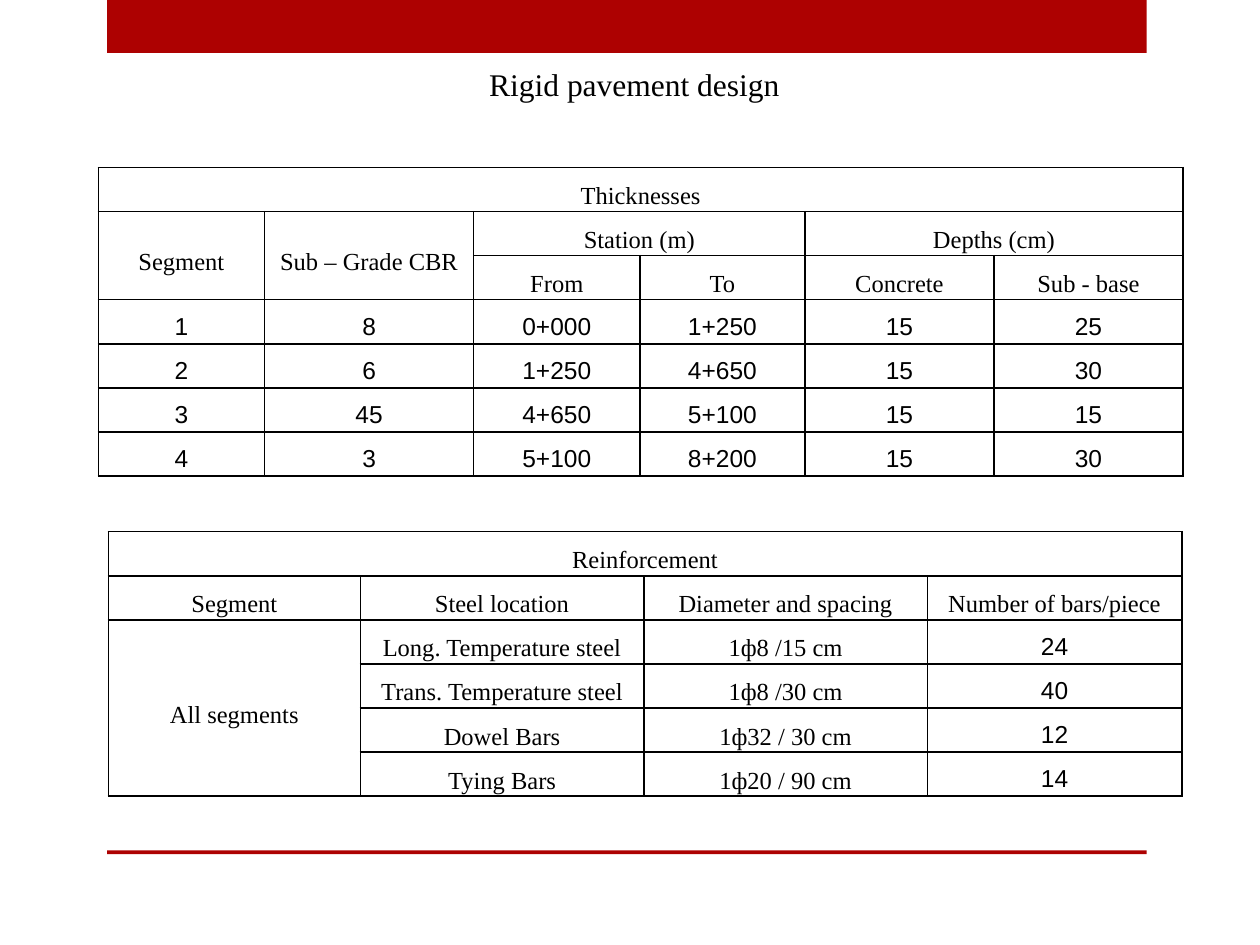
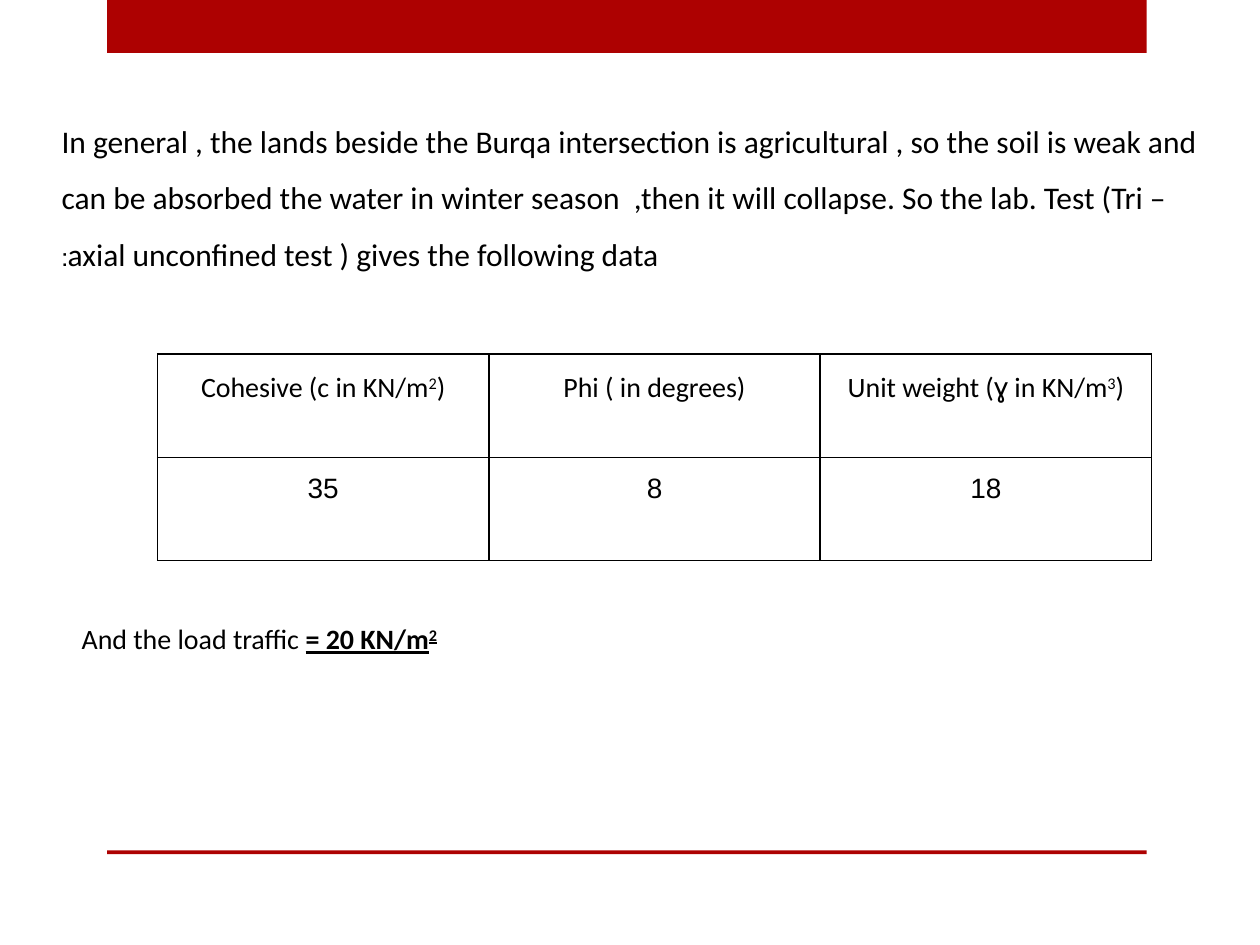
from dataclasses import dataclass

from lxml import etree
from pptx import Presentation
from pptx.dml.color import RGBColor
from pptx.enum import shapes, text
from pptx.oxml.ns import qn
from pptx.util import Inches, Pt


@dataclass(frozen=True)
class Theme:
    red: RGBColor = RGBColor(0xAD, 0x01, 0x01)
    ink: RGBColor = RGBColor(0, 0, 0)
    serif: str = "Times New Roman"
    sans: str = "Calibri"
    figures: str = "Arial"
    title: int = 18
    body: int = 16
    small: int = 14
    line_spacing: float = 1.5


THEME = Theme()


@dataclass(frozen=True)
class Part:
    """A stretch of text that differs from the rest of its paragraph."""
    text: str
    font: str | None = None
    size: int | None = None
    strong: bool = False
    raised: bool = False


THICKNESSES = [
    ["Thicknesses", None, None, None, None, None],
    ["Segment", "Sub – Grade CBR", "Station (m)", None, "Depths (cm)", None],
    [None, None, "From", "To", "Concrete", "Sub - base"],
    ["1", "8", "0+000", "1+250", "15", "25"],
    ["2", "6", "1+250", "4+650", "15", "30"],
    ["3", "45", "4+650", "5+100", "15", "15"],
    ["4", "3", "5+100", "8+200", "15", "30"],
]
THICKNESS_SPANS = [(0, 0, 0, 5), (1, 0, 2, 0), (1, 1, 2, 1), (1, 2, 1, 3), (1, 4, 1, 5)]

REINFORCEMENT = [
    ["Reinforcement", None, None, None],
    ["Segment", "Steel location", "Diameter and spacing", "Number of bars/piece"],
    ["All segments", "Long. Temperature steel", "1ф8 /15 cm", "24"],
    [None, "Trans. Temperature steel", "1ф8 /30 cm", "40"],
    [None, "Dowel Bars", "1ф32 / 30 cm", "12"],
    [None, "Tying Bars", "1ф20 / 90 cm", "14"],
]
REINFORCEMENT_SPANS = [(0, 0, 0, 3), (2, 0, 5, 0)]

SOIL_TEST = [
    [
        [Part("Cohesive (c in KN/m"), Part("2", raised=True), Part(")")],
        "Phi ( in degrees)",
        [Part("Unit weight ("), Part("ɣ", font=THEME.figures), Part(" in KN/m"),
         Part("3", raised=True), Part(")")],
    ],
    ["35", "8", "18"],
]

SOIL_NOTE = [
    Part("In general , the lands beside the Burqa intersection is agricultural , "
         "so the soil is weak and can be absorbed the water in winter season  ,then it "
         "will collapse. So the lab. Test (Tri – axial unconfined test ) gives the "
         "following data"),
    Part(":", size=THEME.small),
]
TRAFFIC_LOAD = [
    Part("And the load traffic "),
    Part("= 20 KN/m", strong=True),
    Part("2", strong=True, raised=True),
]


def write(paragraph, content, font, size, alignment):
    """Fill a paragraph from a string or a list of parts."""
    paragraph.alignment = alignment
    paragraph.font.name = font
    paragraph.font.size = Pt(size)
    paragraph.font.color.rgb = THEME.ink
    for part in [Part(content)] if isinstance(content, str) else content:
        run = paragraph.add_run()
        run.text = part.text
        if part.font:
            run.font.name = part.font
        if part.size:
            run.font.size = Pt(part.size)
        if part.strong:
            run.font.bold = run.font.underline = True
        if part.raised:
            run._r.get_or_add_rPr().set("baseline", "30000")


def add_band(slide, top, height):
    band = slide.shapes.add_shape(shapes.MSO_SHAPE.RECTANGLE, Inches(0.85), Inches(top),
                                  Inches(8.25), Inches(height))
    band.shadow.inherit = False
    band.fill.solid()
    band.fill.fore_color.rgb = THEME.red
    band.line.fill.background()


def add_banded_slide(presentation):
    slide = presentation.slides.add_slide(presentation.slide_layouts[6])
    add_band(slide, 0, 0.42)
    add_band(slide, 6.75, 0.03)
    return slide


def add_text(slide, place, content, font, size,
             alignment=text.PP_ALIGN.LEFT, anchor=text.MSO_ANCHOR.TOP):
    box = slide.shapes.add_textbox(*map(Inches, place))
    frame = box.text_frame
    frame.word_wrap = True
    frame.vertical_anchor = anchor
    write(frame.paragraphs[0], content, font, size, alignment)
    return frame.paragraphs[0]


def outline(cell):
    """Draw thin lines on all four sides of a cell."""
    properties = cell._tc.get_or_add_tcPr()
    for side in ("a:lnL", "a:lnR", "a:lnT", "a:lnB"):
        line = etree.SubElement(properties, qn(side), w=str(Pt(1)))
        fill = etree.SubElement(line, qn("a:solidFill"))
        etree.SubElement(fill, qn("a:srgbClr"), val=str(THEME.ink))


def is_figure(content):
    return isinstance(content, str) and set(content) <= set("0123456789+")


def add_grid(slide, left, top, widths, row_height, rows, font, size,
             spans=(), anchor=text.MSO_ANCHOR.MIDDLE, before=0, after=0):
    """Add an outlined table; spans give first row, first column, last row, last column."""
    frame = slide.shapes.add_table(len(rows), len(widths), Inches(left), Inches(top),
                                   Inches(sum(widths)), Inches(row_height * len(rows)))
    table = frame.table
    table.first_row = table.horz_banding = False
    for column, width in zip(table.columns, widths):
        column.width = Inches(width)
    for row_index, row in enumerate(rows):
        for column_index, content in enumerate(row):
            cell = table.cell(row_index, column_index)
            cell.margin_left = cell.margin_right = Inches(0.07)
            cell.margin_top = cell.margin_bottom = 0
            outline(cell)
            cell.fill.background()
            paragraph = cell.text_frame.paragraphs[0]
            paragraph.line_spacing = THEME.line_spacing
            paragraph.space_before, paragraph.space_after = Pt(before), Pt(after)
            figure = is_figure(content)
            cell.vertical_anchor = text.MSO_ANCHOR.TOP if figure else anchor
            write(paragraph, content or [], THEME.figures if figure else font, size,
                  text.PP_ALIGN.CENTER)
    for first_row, first_column, last_row, last_column in spans:
        table.cell(first_row, first_column).merge(table.cell(last_row, last_column))


def build_pavement_slide(presentation):
    slide = add_banded_slide(presentation)
    add_grid(slide, 0.78, 1.33, [1.32, 1.66, 1.32, 1.31, 1.5, 1.5], 0.35, THICKNESSES,
             THEME.serif, THEME.small, THICKNESS_SPANS)
    add_grid(slide, 0.86, 4.22, [2, 2.25, 2.25, 2.02], 0.35, REINFORCEMENT,
             THEME.serif, THEME.small, REINFORCEMENT_SPANS)
    add_text(slide, (2.34, 0.47, 5.39, 0.4), "Rigid pavement design",
             THEME.serif, THEME.title, text.PP_ALIGN.CENTER)


def build_soil_slide(presentation):
    slide = add_banded_slide(presentation)
    note = add_text(slide, (0.39, 0.78, 9.3, 1.42), SOIL_NOTE, THEME.sans, THEME.title,
                    anchor=text.MSO_ANCHOR.MIDDLE)
    note.line_spacing = THEME.line_spacing
    note._p.get_or_add_pPr().set("rtl", "1")
    add_grid(slide, 1.25, 2.81, [2.63] * 3, 0.82, SOIL_TEST, THEME.sans, THEME.body,
             anchor=text.MSO_ANCHOR.TOP, before=10.5, after=10)
    add_text(slide, (0.55, 4.61, 3.13, 0.64), TRAFFIC_LOAD, THEME.sans, THEME.body,
             anchor=text.MSO_ANCHOR.BOTTOM)


def main():
    presentation = Presentation()
    presentation.slide_width, presentation.slide_height = Inches(10), Inches(7.5)
    build_pavement_slide(presentation)
    build_soil_slide(presentation)
    presentation.save("out.pptx")


if __name__ == "__main__":
    main()
